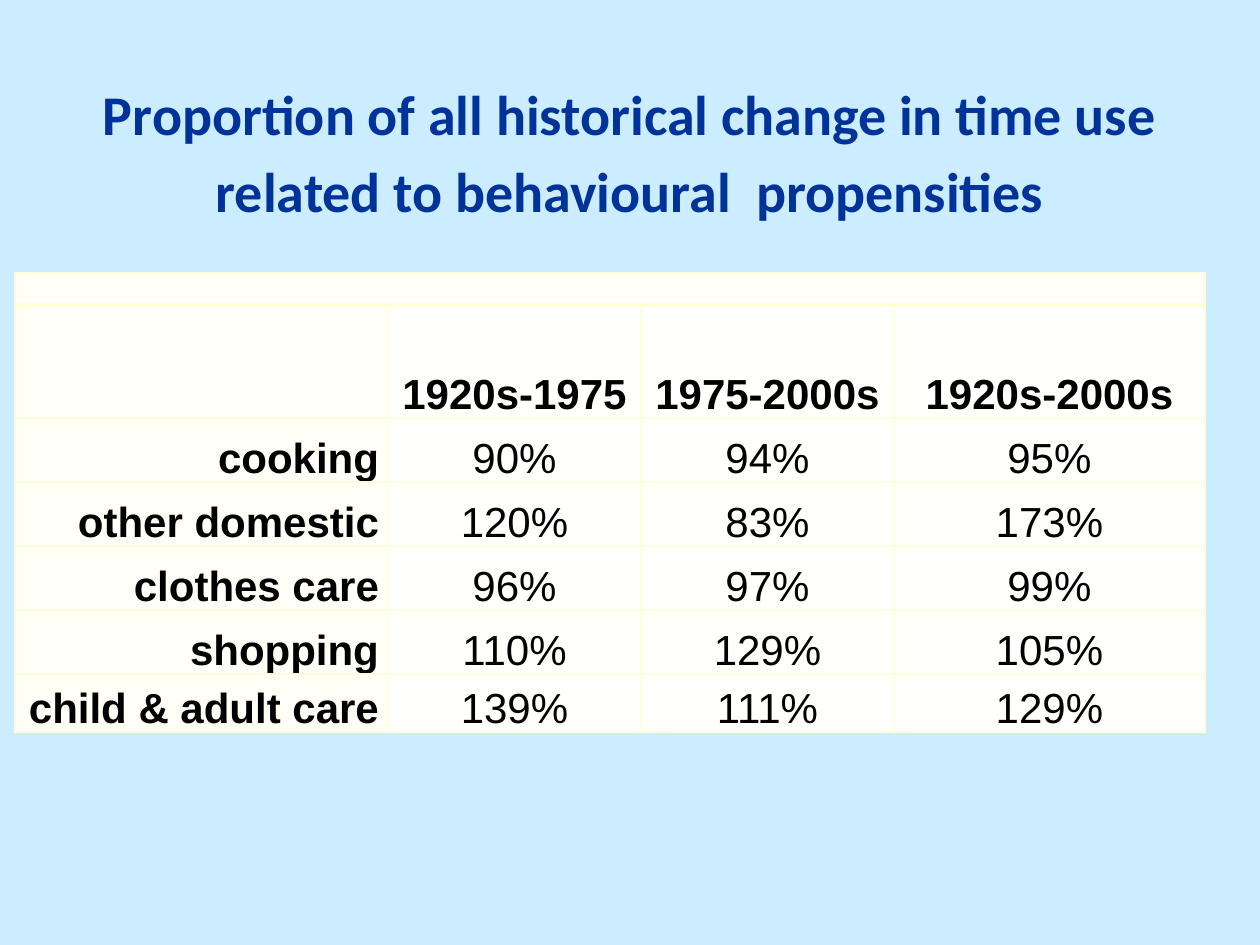
from lxml.etree import SubElement
from pptx import Presentation
from pptx.dml.color import RGBColor
from pptx.enum.text import MSO_ANCHOR, PP_ALIGN
from pptx.oxml import parse_xml
from pptx.oxml.ns import nsdecls, qn
from pptx.util import Emu, Pt

COLOURS = {
    "background": "CCECFF",
    "title": "003399",
    "text": "000000",
    "border": "FFFFD9",
    "label": "FFFFF7",
    "odd": "FFFFFC",
    "even": "FFFFFD",
}
TITLE = "Proportion of all historical change in time use related to behavioural  propensities"
ROWS = [
    ["", "", "", ""],
    ["", "1920s-1975", "1975-2000s", "1920s-2000s"],
    ["cooking", "90%", "94%", "95%"],
    ["other domestic", "120%", "83%", "173%"],
    ["clothes care", "96%", "97%", "99%"],
    ["shopping", "110%", "129%", "105%"],
    ["child & adult care", "139%", "111%", "129%"],
]
COLUMN_WIDTHS = [373, 253, 253, 311]
ROW_HEIGHTS = [32, 113, 64, 64, 64, 64, 53]
LINE_SPACING = 1.15


def px(length):
    return Emu(round(length * 914400 / 126))


def colour(name):
    return RGBColor.from_string(COLOURS[name])


def style_text(para, font_name, size, colour_name, bold, align):
    para.alignment = align
    para.line_spacing = LINE_SPACING
    for span in para.runs:
        span.font.name = font_name
        span.font.size = Pt(size)
        span.font.bold = bold
        span.font.color.rgb = colour(colour_name)


def add_title(page):
    box = page.shapes.add_textbox(px(63), px(38), px(1134), px(217))
    frame = box.text_frame
    frame.word_wrap = True
    frame.vertical_anchor = MSO_ANCHOR.MIDDLE
    frame.text = TITLE
    style_text(frame.paragraphs[0], "Calibri", 32, "title", True, PP_ALIGN.CENTER)


def set_borders(cell, top, bottom):
    """Draw all four sides; top and bottom are widths in points."""
    properties = cell._tc.get_or_add_tcPr()
    sides = {"lnL": 1, "lnR": 1, "lnT": top, "lnB": bottom}
    for index, (side, width) in enumerate(sides.items()):
        line = parse_xml(
            f'<a:{side} {nsdecls("a")} w="{Pt(width)}"><a:solidFill>'
            f'<a:srgbClr val="{COLOURS["border"]}"/></a:solidFill></a:{side}>'
        )
        properties.insert(index, line)


def fill_cell(cell, text, row, column):
    cell.margin_left = cell.margin_right = px(9)
    cell.margin_top = cell.margin_bottom = 0
    cell.vertical_anchor = MSO_ANCHOR.BOTTOM
    para = cell.text_frame.paragraphs[0]
    if text:
        para.text = text
        align = PP_ALIGN.CENTER if column else PP_ALIGN.RIGHT
        style_text(para, "Arial", 24, "text", row == 1 or column == 0, align)
    else:
        # A small end mark keeps an empty cell from stretching its row.
        SubElement(para._p, qn("a:endParaRPr"), sz="1000")
    band = "odd" if row % 2 else "even"
    cell.fill.solid()
    cell.fill.fore_color.rgb = colour("label" if column == 0 or row == 0 else band)
    set_borders(cell, 3 if row == 1 else 1, 3 if row == 0 else 1)


def add_change_table(page):
    frame = page.shapes.add_table(
        len(ROWS), len(COLUMN_WIDTHS), px(15), px(273),
        px(sum(COLUMN_WIDTHS)), px(sum(ROW_HEIGHTS)),
    )
    table = frame.table
    table.first_row = table.horz_banding = False
    for column, width in zip(table.columns, COLUMN_WIDTHS):
        column.width = px(width)
    for row, height in zip(table.rows, ROW_HEIGHTS):
        row.height = px(height)
    for row, texts in enumerate(ROWS):
        for column, text in enumerate(texts):
            fill_cell(table.cell(row, column), text, row, column)
    table.cell(0, 0).merge(table.cell(0, len(COLUMN_WIDTHS) - 1))


def main():
    deck = Presentation()
    deck.slide_width, deck.slide_height = px(1260), px(945)
    page = deck.slides.add_slide(deck.slide_layouts[6])
    page.background.fill.solid()
    page.background.fill.fore_color.rgb = colour("background")
    add_title(page)
    add_change_table(page)
    deck.save("out.pptx")


if __name__ == "__main__":
    main()
